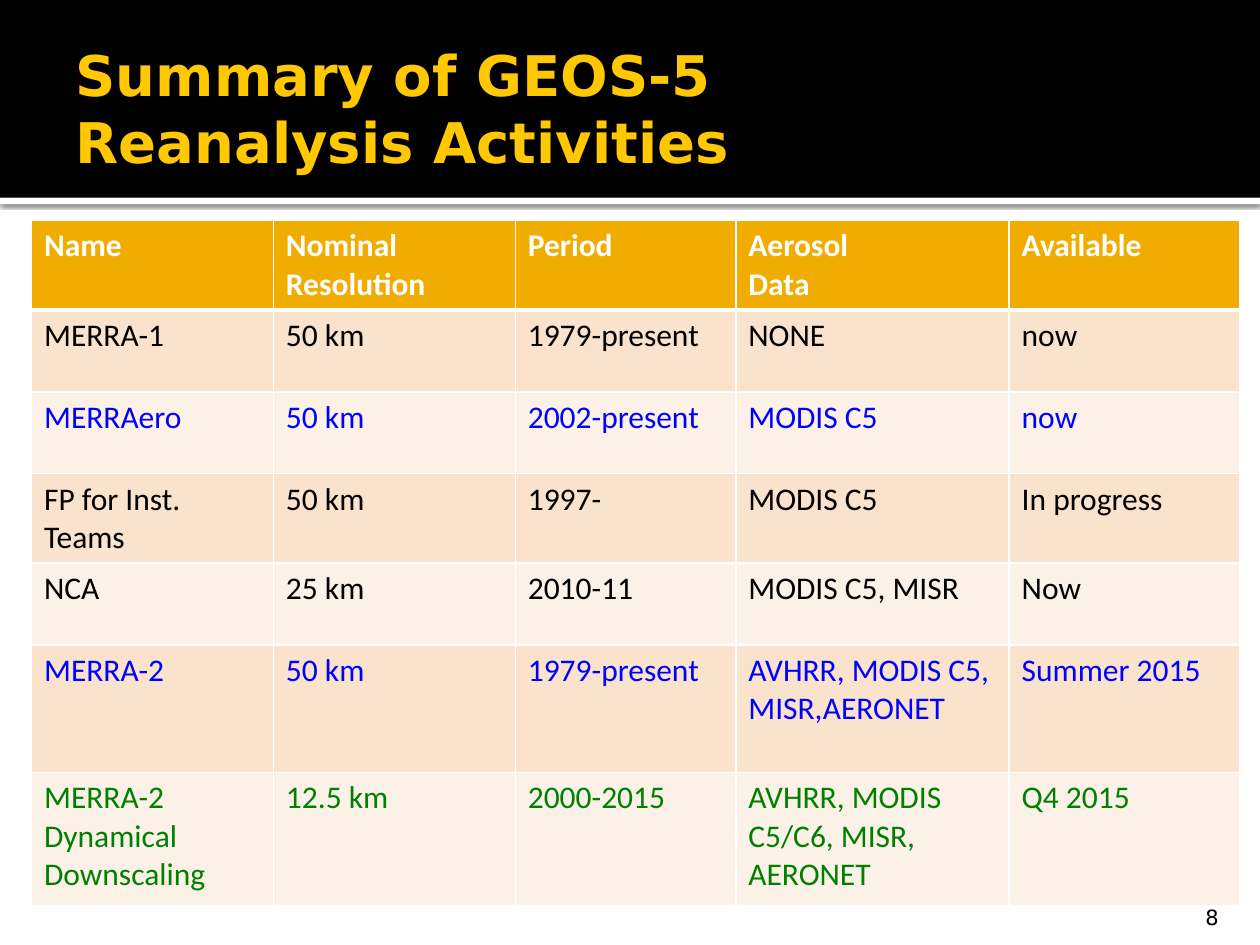
from lxml import etree
from pptx import Presentation
from pptx.dml.color import RGBColor
from pptx.enum.shapes import MSO_SHAPE
from pptx.enum.text import MSO_ANCHOR, MSO_AUTO_SIZE, PP_ALIGN
from pptx.oxml.ns import qn
from pptx.util import Inches, Pt

RECTANGLE = MSO_SHAPE.RECTANGLE
MIDDLE, BOTTOM = MSO_ANCHOR.MIDDLE, MSO_ANCHOR.BOTTOM
LEFT, RIGHT = PP_ALIGN.LEFT, PP_ALIGN.RIGHT
NO_AUTOFIT = MSO_AUTO_SIZE.NONE

TITLE_ONLY = 5
GRID_COLUMNS, GRID_ROWS = 40, 30
BLACK, WHITE, BLUE, GREEN = "000000", "FFFFFF", "0000FF", "008000"
YELLOW, AMBER = "FFC800", "F0AD00"
BAND_FILLS = ("F9E3CC", "FCF1E7")

# Table content: text colour and cells of each row; sizes in grid units
COLUMN_WIDTHS = (7.68, 7.68, 7, 8.68, 7.32)
ROW_HEIGHTS = (2.84, 2.6, 2.6, 2.84, 2.6, 4.04, 4.24)
TABLE_ROWS = (
    (WHITE, ("Name", "Nominal\nResolution", "Period", "Aerosol\nData", "Available")),
    (BLACK, ("MERRA-1", "50 km", "1979-present", "NONE", "now")),
    (BLUE, ("MERRAero", "50 km", "2002-present", "MODIS C5", "now")),
    (BLACK, ("FP for Inst.\nTeams", "50 km", "1997-", "MODIS C5", "In progress")),
    (BLACK, ("NCA", "25 km", "2010-11", "MODIS C5, MISR", "Now")),
    (BLUE, ("MERRA-2", "50 km", "1979-present",
            "AVHRR, MODIS C5, MISR,AERONET", "Summer 2015")),
    (GREEN, ("MERRA-2\nDynamical\nDownscaling", "12.5 km", "2000-2015",
             "AVHRR, MODIS C5/C6, MISR, AERONET", "Q4 2015")),
)


def color(hex_string):
    return RGBColor.from_string(hex_string)


class SlideBuilder:
    heading_font = "DejaVu Sans"
    table_font = "Calibri"

    def __init__(self, presentation):
        self.slide = presentation.slides.add_slide(presentation.slide_layouts[TITLE_ONLY])
        self.unit_x = presentation.slide_width / GRID_COLUMNS
        self.unit_y = presentation.slide_height / GRID_ROWS

    def place(self, left, top, width, height):
        return (round(left * self.unit_x), round(top * self.unit_y),
                round(width * self.unit_x), round(height * self.unit_y))

    def format_text(self, text_frame, font_name, size, text_color, bold=False, align=LEFT):
        for paragraph in text_frame.paragraphs:
            paragraph.alignment = align
            for run in paragraph.runs:
                run.font.name = font_name
                run.font.size = Pt(size)
                run.font.bold = bold
                run.font.color.rgb = color(text_color)

    def band(self, box, fill, shadow=False):
        shape = self.slide.shapes.add_shape(RECTANGLE, *self.place(*box))
        shape.shadow.inherit = False
        shape.fill.solid()
        shape.fill.fore_color.rgb = color(fill)
        shape.line.fill.background()
        if shadow:
            effects = shape._element.spPr.find(qn("a:effectLst"))
            outer = etree.SubElement(effects, qn("a:outerShdw"), blurRad=str(Pt(2.5)),
                                     dist=str(Pt(0.8)), dir="5400000", rotWithShape="0")
            shade = etree.SubElement(outer, qn("a:srgbClr"), val=BLACK)
            etree.SubElement(shade, qn("a:alpha"), val="60000")

    def title(self, box, text):
        shape = self.slide.shapes.title
        shape.left, shape.top, shape.width, shape.height = self.place(*box)
        frame = shape.text_frame
        frame.text = text
        frame.word_wrap = True
        frame.auto_size = NO_AUTOFIT
        frame.vertical_anchor = MIDDLE
        frame.margin_right = Inches(0.05)
        self.format_text(frame, self.heading_font, 32, YELLOW, bold=True)
        # Bring the title in front of the header band
        self.slide.shapes._spTree.append(shape._element)

    def page_number(self, box, text):
        frame = self.slide.shapes.add_textbox(*self.place(*box)).text_frame
        frame.text = text
        frame.word_wrap = True
        frame.vertical_anchor = BOTTOM
        frame.margin_bottom = 0
        self.format_text(frame, self.heading_font, 12, BLACK, align=RIGHT)

    def cell_borders(self, cell, top, bottom):
        properties = cell._tc.get_or_add_tcPr()
        for side, width in (("L", 1), ("R", 1), ("T", top), ("B", bottom)):
            line = etree.SubElement(properties, qn(f"a:ln{side}"), w=str(Pt(width)))
            fill = etree.SubElement(line, qn("a:solidFill"))
            etree.SubElement(fill, qn("a:srgbClr"), val=WHITE)

    def table(self, left, top):
        box = self.place(left, top, sum(COLUMN_WIDTHS), sum(ROW_HEIGHTS))
        table = self.slide.shapes.add_table(len(ROW_HEIGHTS), len(COLUMN_WIDTHS), *box).table
        for column, width in zip(table.columns, COLUMN_WIDTHS):
            column.width = round(width * self.unit_x)
        for index, (text_color, texts) in enumerate(TABLE_ROWS):
            header = index == 0
            table.rows[index].height = round(ROW_HEIGHTS[index] * self.unit_y)
            for cell, text in zip(table.rows[index].cells, texts):
                cell.text_frame.text = text
                self.format_text(cell.text_frame, self.table_font, 18, text_color, bold=header)
                # A thick rule separates the header from the body
                self.cell_borders(cell, 3 if index == 1 else 1, 3 if header else 1)
                cell.fill.solid()
                cell.fill.fore_color.rgb = color(AMBER if header else BAND_FILLS[(index - 1) % 2])


def main():
    presentation = Presentation()
    presentation.slide_width, presentation.slide_height = Inches(10), Inches(7.5)
    builder = SlideBuilder(presentation)

    # Header
    builder.band((0, 6.28, GRID_COLUMNS, 0.2), WHITE, shadow=True)
    builder.band((0, 0, GRID_COLUMNS, 6.28), BLACK)
    builder.title((2, 0.68, 36, 5.48), "Summary of GEOS-5 \vReanalysis Activities")

    # Page number and table
    builder.page_number((35.88, 28.32, 3.2, 1.2), "8")
    builder.table(1, 7)

    presentation.save("out.pptx")


if __name__ == "__main__":
    main()
